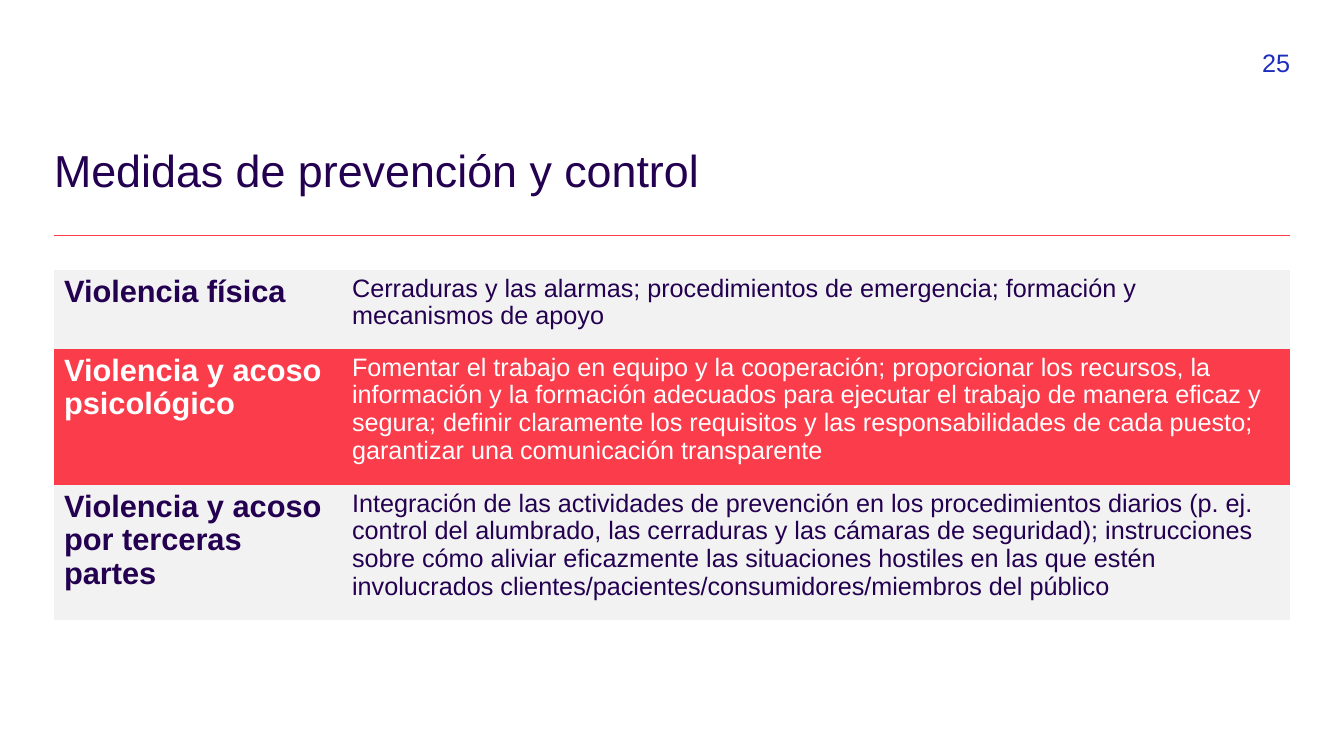
from pptx import Presentation
from pptx.dml.color import RGBColor
from pptx.enum.shapes import MSO_CONNECTOR
from pptx.enum.text import MSO_ANCHOR, PP_ALIGN
from pptx.oxml.ns import qn
from pptx.util import Inches, Pt
from lxml.etree import SubElement

PURPLE = RGBColor(0x23, 0x00, 0x50)
RED = RGBColor(0xFA, 0x3C, 0x4B)
BLUE = RGBColor(0x1E, 0x2D, 0xBE)
GREY = RGBColor(0xF2, 0xF2, 0xF2)
WHITE = RGBColor(0xFF, 0xFF, 0xFF)

PX_PER_INCH = 100.8
LEFT, RIGHT = 54, 1290
COLUMN_WIDTHS = (288, 948)
ROW_HEIGHTS = (79, 136, 135)

MEASURES = (
    ("Violencia física",
     "Cerraduras y las alarmas; procedimientos de emergencia; formación y "
     "mecanismos de apoyo"),
    ("Violencia y acoso psicológico",
     "Fomentar el trabajo en equipo y la cooperación; proporcionar los recursos, "
     "la información y la formación adecuados para ejecutar el trabajo de manera "
     "eficaz y segura; definir claramente los requisitos y las responsabilidades "
     "de cada puesto; garantizar una comunicación transparente"),
    ("Violencia y acoso por terceras partes",
     "Integración de las actividades de prevención en los procedimientos diarios "
     "(p. ej. control del alumbrado, las cerraduras y las cámaras de seguridad); "
     "instrucciones sobre cómo aliviar eficazmente las situaciones hostiles en las "
     "que estén involucrados clientes/pacientes/consumidores/miembros del público"),
)


def px(length):
    return Inches(length / PX_PER_INCH)


def write_text(text_frame, text, size, color, bold=False, line_spacing=1.0):
    paragraph = text_frame.paragraphs[0]
    paragraph.text = text
    paragraph.line_spacing = line_spacing
    font = paragraph.runs[0].font
    font.name = "Arial"
    font.size = Pt(size)
    font.bold = bold
    font.color.rgb = color
    return paragraph


def add_text_box(slide, left, top, width, height, anchor):
    """Add an empty wrapping text box without insets."""
    shape = slide.shapes.add_textbox(px(left), px(top), px(width), px(height))
    text_frame = shape.text_frame
    text_frame.word_wrap = True
    text_frame.vertical_anchor = anchor
    text_frame.margin_left = text_frame.margin_right = 0
    text_frame.margin_top = text_frame.margin_bottom = 0
    return text_frame


def add_rule(slide, y):
    line = slide.shapes.add_connector(
        MSO_CONNECTOR.STRAIGHT, px(LEFT), px(y), px(RIGHT), px(y))
    line.line.color.rgb = RED
    line.line.width = Pt(0.5)
    SubElement(line._element.spPr, qn("a:effectLst"))


def add_measures_table(slide, top):
    """Add the table whose rows alternate between grey and red."""
    table = slide.shapes.add_table(
        len(MEASURES), len(COLUMN_WIDTHS), px(LEFT), px(top),
        px(sum(COLUMN_WIDTHS)), px(sum(ROW_HEIGHTS))).table
    table.first_row = False
    table.horz_banding = False
    # The "No Style, No Grid" table style leaves the cells without borders.
    style = table._tbl.tblPr.find(qn("a:tableStyleId"))
    style.text = "{2D5ABB26-0587-4C30-8999-92F81FD0307C}"
    for column, width in zip(table.columns, COLUMN_WIDTHS):
        column.width = px(width)
    for index, (row, texts) in enumerate(zip(table.rows, MEASURES)):
        row.height = px(ROW_HEIGHTS[index])
        fill, color = (RED, WHITE) if index % 2 else (GREY, PURPLE)
        for cell, text, size, bold in zip(row.cells, texts, (22, 18), (True, False)):
            cell.fill.solid()
            cell.fill.fore_color.rgb = fill
            write_text(cell.text_frame, text, size, color, bold, 0.98)


def main():
    presentation = Presentation()
    presentation.slide_width = px(1344)
    presentation.slide_height = px(756)
    slide = presentation.slides.add_slide(presentation.slide_layouts[6])

    add_rule(slide, 235)
    title = add_text_box(slide, LEFT, 157, RIGHT - LEFT, 80, MSO_ANCHOR.TOP)
    write_text(title, "Medidas de prevención y control", 32, PURPLE, line_spacing=0.7)
    add_measures_table(slide, 270)
    number = add_text_box(slide, 1231, 47, 59, 31, MSO_ANCHOR.BOTTOM)
    write_text(number, "25", 18, BLUE).alignment = PP_ALIGN.RIGHT

    presentation.save("out.pptx")


if __name__ == "__main__":
    main()
